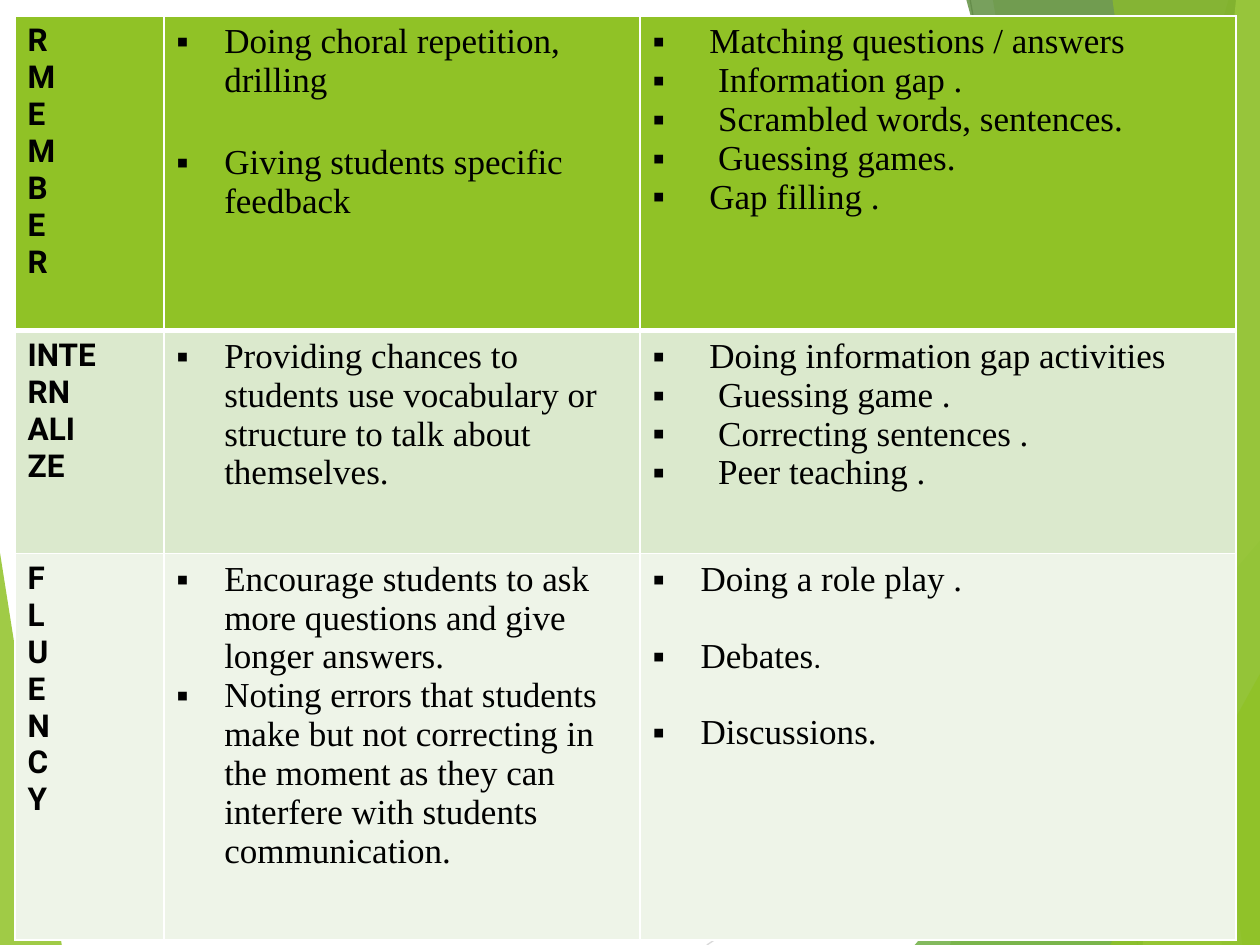
import pptx
import pptx.util
import pptx.dml.color
import pptx.enum.shapes
import pptx.oxml.ns
import lxml.etree

RGB = pptx.dml.color.RGBColor
GREEN = RGB(0x90, 0xC2, 0x26)
LEAF = RGB(0x54, 0xA0, 0x21)
FOREST = RGB(0x3F, 0x78, 0x19)
LIME = RGB(0xC0, 0xE4, 0x74)
BAND = RGB(0xDB, 0xE9, 0xCD)
PALE = RGB(0xEE, 0xF4, 0xE8)
BLACK = RGB(0, 0, 0)
WHITE = RGB(0xFF, 0xFF, 0xFF)
GREY = RGB(0xD9, 0xD9, 0xD9)
MID_GREY = RGB(0xBF, 0xBF, 0xBF)

prs = pptx.Presentation()
prs.slide_width = pptx.util.Inches(10)
prs.slide_height = pptx.util.Inches(7.5)
X = prs.slide_width / 100
Y = prs.slide_height / 100
s = prs.slides.add_slide(prs.slide_layouts[6])


def add(parent, tag, **attrs):
    return lxml.etree.SubElement(parent, pptx.oxml.ns.qn(tag), attrs)


def facet(points, color, alpha):
    pts = [(round(x * X), round(y * Y)) for x, y in points]
    fb = s.shapes.build_freeform(*pts[0], scale=1.0)
    fb.add_line_segments(pts[1:], close=True)
    sp = fb.convert_to_shape()
    sp.shadow.inherit = False
    sp.line.fill.background()
    sp.fill.solid()
    sp.fill.fore_color.rgb = color
    clr = sp.fill._xPr.find(".//" + pptx.oxml.ns.qn("a:srgbClr"))
    add(clr, "a:alpha", val=str(alpha * 1000))


facet([(0, 58.5), (4.9, 100), (0, 100)], GREEN, 85)

for x1, y1, x2, y2, color in [(56.1, 100, 100, 61, GREY), (77, 0, 90.3, 100, MID_GREY)]:
    c = s.shapes.add_connector(
        pptx.enum.shapes.MSO_CONNECTOR.STRAIGHT,
        round(x1 * X), round(y1 * Y), round(x2 * X), round(y2 * Y))
    c.line.color.rgb = color
    c.line.width = pptx.util.Pt(0.75)
    add(c._element.spPr, "a:effectLst")

for top, bottom, color, alpha in [
    ((97.5, 0), 75.4, GREEN, 30),
    ((78.8, 0), 91.9, GREEN, 20),
    ((100, 57.2), 72.6, LEAF, 72),
    ((76.7, 0), 97, FOREST, 70),
    ((98.1, 0), 90.7, LIME, 70),
    ((88.3, 0), 98.6, GREEN, 65),
    ((100, 71.3), 88.1, GREEN, 80),
]:
    facet([top, (bottom, 100), (100, 100), (100, top[1])], color, alpha)

COLS = [11.8, 37.8, 47.3]
ROWS = [33.3, 23.6, 40.9]
FILLS = [GREEN, BAND, PALE]
LABELS = ["RMEMBER", ["INTE", "RN", "ALI", "ZE"], "FLUENCY"]
SPACE = 0.07
# Each bullet: text, indent in spaces, points of space before
BULLETS = [
    [[("Doing choral repetition, drilling", 0, 0),
      ("Giving students specific feedback", 0, 24.5)],
     [("Matching questions / answers", 1, 0),
      ("Information gap .", 2, 0),
      ("Scrambled words, sentences.", 2, 0),
      ("Guessing games.", 2, 0),
      ("Gap filling .", 1, 0)]],
    [[("Providing chances to students use vocabulary or structure "
       "to talk about themselves.", 0, 0)],
     [("Doing information gap activities", 1, 0),
      ("Guessing game .", 2, 0),
      ("Correcting sentences .", 2, 0),
      ("Peer teaching .", 2, 0)]],
    [[("Encourage students to ask more questions and give longer answers.", 0, 0),
      ("Noting errors that students make but not correcting in the moment "
       "as they can interfere with students communication.", 0, 0)],
     [("Doing a role play .", 0, 0),
      ("Debates.", 0, 22),
      ("Discussions.", 0, 21)]],
]

tbl = s.shapes.add_table(
    3, 3, round(1.2 * X), round(1.7 * Y),
    round(sum(COLS) * X), round(sum(ROWS) * Y)).table
tbl.first_row = False
tbl.horz_banding = False
for col, w in zip(tbl.columns, COLS):
    col.width = round(w * X)
for row, h in zip(tbl.rows, ROWS):
    row.height = round(h * Y)

for i in range(3):
    contents = [[(label, 0, 0) for label in LABELS[i]]] + BULLETS[i]
    for j, items in enumerate(contents):
        cell = tbl.cell(i, j)
        tcPr = cell._tc.get_or_add_tcPr()
        for side in "LRTB":
            heavy = (i, side) in [(0, "B"), (1, "T")]
            ln = add(tcPr, "a:ln" + side, w=str(pptx.util.Pt(3 if heavy else 1)))
            add(add(ln, "a:solidFill"), "a:srgbClr", val=str(WHITE))
        cell.fill.solid()
        cell.fill.fore_color.rgb = FILLS[i]

        tf = cell.text_frame
        for n, (text, spaces, before) in enumerate(items):
            p = tf.paragraphs[0] if n == 0 else tf.add_paragraph()
            p.space_before = pptx.util.Pt(before)
            if j:
                indent = pptx.util.Inches(0.38 + spaces * SPACE)
                pPr = p._p.get_or_add_pPr()
                pPr.set("marL", str(indent))
                pPr.set("indent", str(-indent))
                add(pPr, "a:buFont", typeface="Times New Roman")
                add(pPr, "a:buChar", char="▪")
            runs = [(text, "Times New Roman", 20)] if j else [(text, "Roboto", 18)]
            if text == "Debates.":
                runs = [("Debates", "Times New Roman", 20), (".", "Roboto", 18)]
            for part, font, size in runs:
                r = p.add_run()
                r.text = part
                r.font.name = font
                r.font.size = pptx.util.Pt(size)
                r.font.bold = j == 0
                r.font.color.rgb = BLACK

prs.save("out.pptx")
